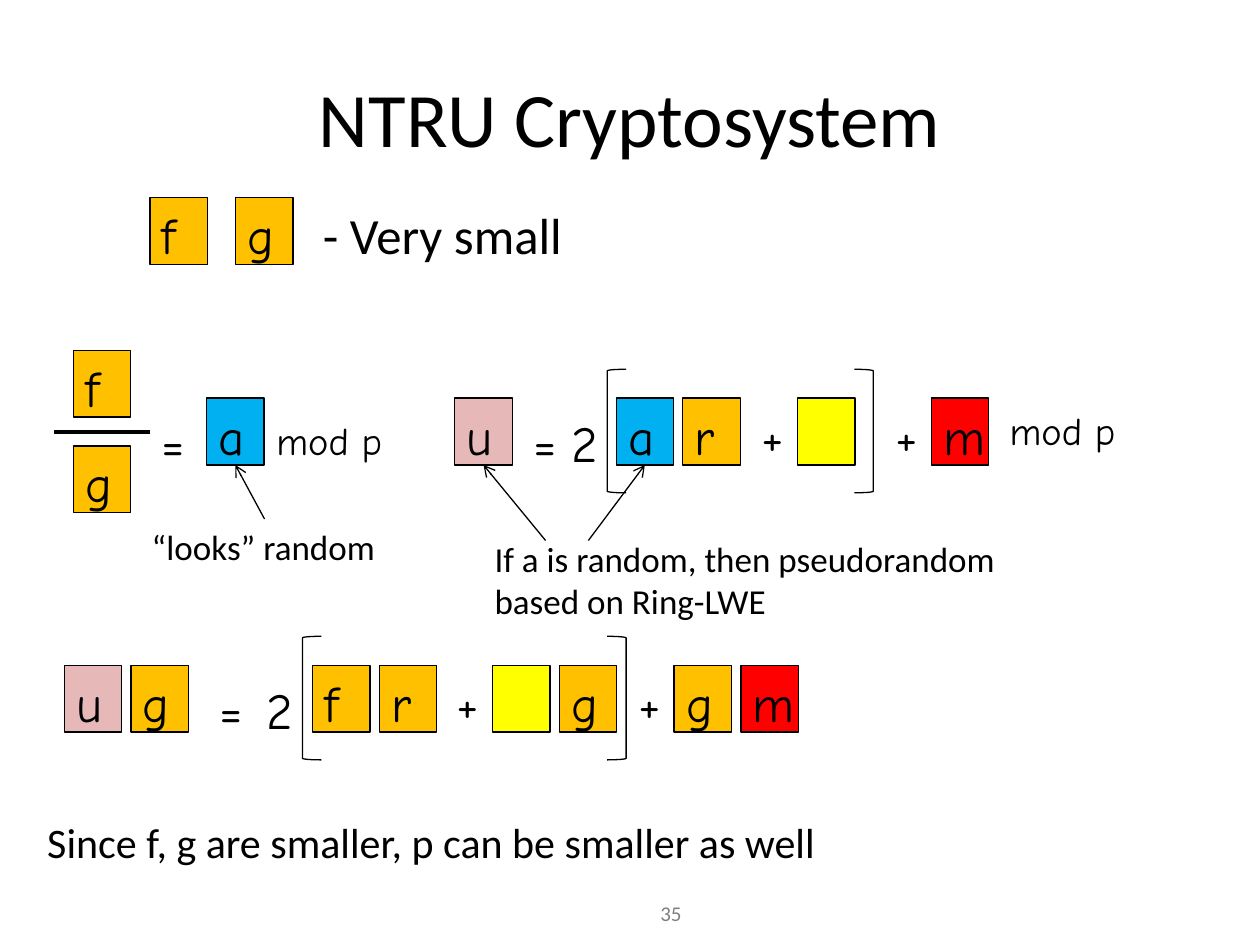
from lxml.etree import SubElement
from pptx import Presentation
from pptx.dml.color import RGBColor
from pptx.enum.shapes import MSO_CONNECTOR, MSO_SHAPE
from pptx.enum.text import MSO_ANCHOR, PP_ALIGN
from pptx.oxml.ns import qn
from pptx.util import Pt

COLORS = {
    "black": "000000", "gray": "808080", "orange": "FFC000", "blue": "00B0F0",
    "yellow": "FFFF00", "red": "FF0000", "pink": "E6B9B8",
}
LETTER_COLORS = {
    "f": "orange", "g": "orange", "r": "orange", "a": "blue",
    "u": "pink", "m": "red", "": "yellow",
}
TILE_WIDTH, TILE_HEIGHT = 32.8, 38.2


def write(shape, text, size=29, font="Comic Neue", color="black",
          align=PP_ALIGN.LEFT, anchor=MSO_ANCHOR.TOP):
    frame = shape.text_frame
    frame.word_wrap = True
    frame.vertical_anchor = anchor
    frame.margin_left = frame.margin_right = Pt(6.8)
    frame.margin_top = frame.margin_bottom = Pt(3.6)
    para = frame.paragraphs[0]
    para.alignment = align
    span = para.add_run()
    span.text = text
    span.font.size = Pt(size)
    span.font.name = font
    span.font.color.rgb = RGBColor.from_string(COLORS[color])


def add_line(start, end, width):
    line = page.shapes.add_connector(MSO_CONNECTOR.STRAIGHT, *map(Pt, start + end))
    line.line.width = Pt(width)
    line.line.color.rgb = RGBColor.from_string(COLORS["black"])
    SubElement(line._element.spPr, qn("a:effectLst"))
    return line


deck = Presentation()
deck.slide_width, deck.slide_height = Pt(720), Pt(540)
page = deck.slides.add_slide(deck.slide_layouts[6])

centered = {"font": "Calibri", "align": PP_ALIGN.CENTER}
labels = [
    ("35", 339.1, 511.2, 88.6, 28.8, {**centered, "size": 12, "color": "gray"}),
    ("NTRU Cryptosystem", 36, 21.6, 648, 90,
     {**centered, "size": 44, "anchor": MSO_ANCHOR.MIDDLE}),
    ("- Very small", 177.8, 113, 413.3, 41.8, {"font": "Calibri"}),
    ("“looks” random", 79.9, 296.6, 179.3, 31, {"font": "Calibri", "size": 20}),
    ("If a is random, then pseudorandom based on Ring-LWE",
     275.8, 303.8, 337.7, 54.7, {"font": "Calibri", "size": 20}),
    ("Since f, g are smaller, p can be smaller as well",
     20.2, 463, 631.4, 36, {"font": "Calibri", "size": 24}),
    ("mod p", 151.2, 234.7, 76.3, 33.1, {"size": 22}),
    ("mod p", 570.2, 229, 76.3, 33.1, {"size": 22}),
]
symbol_rows = [
    (227.5, [("+", 428.4), ("+", 504.7)]),
    (231.8, [("=", 85.7), ("=", 298.1), ("2", 319.7)]),
    (380.2, [("+", 254.2), ("+", 357.8)]),
    (384.5, [("=", 118.8), ("2", 145.4)]),
]
for top, symbols in symbol_rows:
    for symbol, left in symbols:
        labels.append((symbol, left, top, 38.2 if symbol == "2" else 27.4, 41.8, {}))

tile_rows = [
    (113, [("f", 85.7), ("g", 134.6)]),
    (200.2, [("f", 41.8)]),
    (254.9, [("g", 41.8)]),
    (227.5, [("a", 118.1), ("u", 259.9), ("a", 352.1), ("r", 390.2),
             ("", 455.8), ("m", 532.1)]),
    (380.2, [("u", 36.7), ("g", 74.9), ("f", 178.6), ("r", 216.7), ("", 281.5),
             ("g", 319.7), ("g", 385.2), ("m", 423.4)]),
]
tiles = {}
for top, row in tile_rows:
    for letter, left in row:
        tile = page.shapes.add_shape(MSO_SHAPE.RECTANGLE, Pt(left), Pt(top),
                                     Pt(TILE_WIDTH), Pt(TILE_HEIGHT))
        tile.shadow.inherit = False
        tile.fill.solid()
        tile.fill.fore_color.rgb = RGBColor.from_string(COLORS[LETTER_COLORS[letter]])
        tile.line.color.rgb = RGBColor.from_string(COLORS["black"])
        tile.line.width = Pt(0.75)
        if letter:
            write(tile, letter)
        tiles[left, top] = tile

for text, left, top, width, height, style in labels:
    box = page.shapes.add_textbox(Pt(left), Pt(top), Pt(width), Pt(height))
    write(box, text, **style)

for top, opening, closing in [(211, 347, 488.2), (363.6, 172.8, 347)]:
    for kind, left in [(MSO_SHAPE.LEFT_BRACKET, opening),
                       (MSO_SHAPE.RIGHT_BRACKET, closing)]:
        bracket = page.shapes.add_shape(kind, Pt(left), Pt(top), Pt(10.8), Pt(70.6))
        bracket.shadow.inherit = False
        bracket.fill.background()
        bracket.line.color.rgb = RGBColor.from_string(COLORS["black"])
        bracket.line.width = Pt(0.75)

add_line((31, 247), (85.7, 247), 2)

middle_top = 227.5
for start, tile_left in [((151.2, 296.6), 118.1), ((311.8, 308.9), 259.9),
                         ((336.2, 308.9), 352.1)]:
    end = (tile_left + TILE_WIDTH / 2, middle_top + TILE_HEIGHT)
    arrow = add_line(start, end, 0.75)
    arrow.end_connect(tiles[tile_left, middle_top], 2)
    SubElement(arrow.line._get_or_add_ln(), qn("a:tailEnd"), type="arrow")

deck.save("out.pptx")
